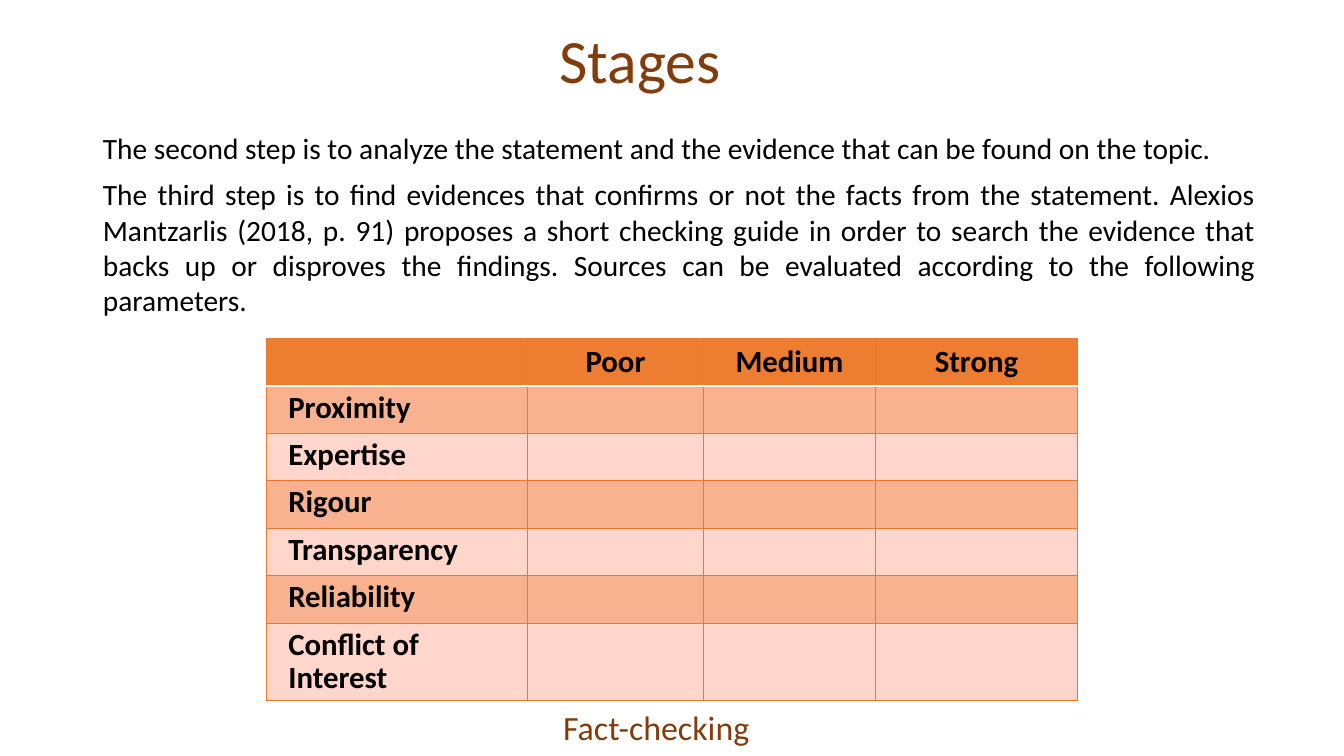
from dataclasses import dataclass

from lxml.etree import SubElement as Sub
from pptx import Presentation
from pptx.dml.color import RGBColor as RGB
from pptx.enum.text import MSO_ANCHOR as Anchor, MSO_AUTO_SIZE as Fit, PP_ALIGN as Align
from pptx.oxml.ns import qn
from pptx.util import Inches, Pt


@dataclass(frozen=True)
class Theme:
    font: str = "Calibri"
    ink: str = "000000"
    brown: str = "833C0B"
    head: str = "ED7D31"
    band: str = "F8B28F"
    pale: str = "FFD6CB"
    line: str = "EC792B"
    white: str = "FFFFFF"
    title: float = 44
    foot: float = 24.2
    body: float = 21
    cell: float = 22


class Deck:
    def __init__(self, theme):
        self.theme = theme
        self.prs = Presentation()
        self.prs.slide_width = Inches(13.33)
        self.prs.slide_height = Inches(7.5)
        self.slide = self.prs.slides.add_slide(self.prs.slide_layouts[1])

    def place(self, shape, box, anchor):
        shape.left, shape.top, shape.width, shape.height = map(Inches, box)
        frame = shape.text_frame
        frame.word_wrap = True
        frame.auto_size = Fit.NONE
        frame.vertical_anchor = anchor
        return frame

    def add_text(self, para, text, size, color, align, lead=1.0, after=0, bold=False):
        para.alignment = align
        para.line_spacing = lead
        para.space_before, para.space_after = Pt(0), Pt(after)
        run = para.add_run()
        run.text = text
        run.font.name = self.theme.font
        run.font.size = Pt(size)
        run.font.bold = bold
        run.font.color.rgb = RGB.from_string(color)

    def title(self, text, box):
        frame = self.place(self.slide.shapes.title, box, Anchor.MIDDLE)
        self.add_text(frame.paragraphs[0], text, self.theme.title, self.theme.brown,
                      Align.CENTER, 0.9)

    def body(self, texts, box):
        frame = self.place(self.slide.placeholders[1], box, Anchor.TOP)
        for i, text in enumerate(texts):
            para = frame.add_paragraph() if i else frame.paragraphs[0]
            self.add_text(para, text, self.theme.body, self.theme.ink, Align.JUSTIFY, after=8)
            props = para._p.get_or_add_pPr()
            props.set("marL", "0")
            props.set("indent", "0")
            Sub(props, qn("a:buNone"))

    def label(self, text, box):
        shape = self.slide.shapes.add_textbox(*map(Inches, box))
        frame = self.place(shape, box, Anchor.MIDDLE)
        self.add_text(frame.paragraphs[0], text, self.theme.foot, self.theme.brown,
                      Align.CENTER, 0.7)

    def edge(self, cell, side, color, width):
        line = Sub(cell._tc.get_or_add_tcPr(), qn(f"a:ln{side}"), w=str(Pt(width)))
        fill = Sub(line, qn("a:solidFill"))
        Sub(fill, qn("a:srgbClr"), val=color)

    def paint(self, cell, row):
        look = self.theme
        for side in "LRTB":
            rule = (side, row) in (("B", 0), ("T", 1))  # white rule under the header
            self.edge(cell, side, look.white if rule else look.line, 2 if rule else 0.75)
        color = look.head if row == 0 else look.band if row % 2 else look.pale
        cell.fill.solid()
        cell.fill.fore_color.rgb = RGB.from_string(color)

    def table(self, heads, names, box, widths, heights):
        shape = self.slide.shapes.add_table(len(heights), len(widths), *map(Inches, box))
        grid = shape.table
        for col, width in zip(grid.columns, widths):
            col.width = Inches(width)
        for r, height in enumerate(heights):
            grid.rows[r].height = Inches(height)
            for c in range(len(widths)):
                cell = grid.cell(r, c)
                self.paint(cell, r)
                text = heads[c] if r == 0 else "" if c else names[r - 1]
                if not text:
                    continue
                para = cell.text_frame.paragraphs[0]
                self.add_text(para, text, self.theme.cell, self.theme.ink,
                              Align.LEFT if r else Align.CENTER, 0.9 if r else 1.0, bold=True)
                if r:
                    para._p.get_or_add_pPr().set("marL", str(Inches(0.12)))


def main():
    deck = Deck(Theme())

    # Title and text
    deck.title("Stages", (0.92, 0.43, 10.86, 0.41))
    deck.body([
        "The second step is to analyze the statement and the evidence that can be "
        "found on the topic.",
        "The third step is to find evidences that confirms or not the facts from the "
        "statement. Alexios Mantzarlis (2018, p. 91) proposes a short checking guide in "
        "order to search the evidence that backs up or disproves the findings. Sources "
        "can be evaluated according to the following parameters.",
    ], (0.92, 1.24, 11.63, 1.98))

    # Rating table
    names = ["Proximity", "Expertise", "Rigour", "Transparency", "Reliability",
             "Conflict of Interest"]
    deck.table(["", "Poor", "Medium", "Strong"], names, (2.64, 3.36, 8.05, 3.59),
               [2.59, 1.75, 1.7, 2.01], [0.47] * len(names) + [0.77])

    # Footer
    deck.label("Fact-checking", (1.08, 7.06, 10.86, 0.41))

    deck.prs.save("out.pptx")


if __name__ == "__main__":
    main()
